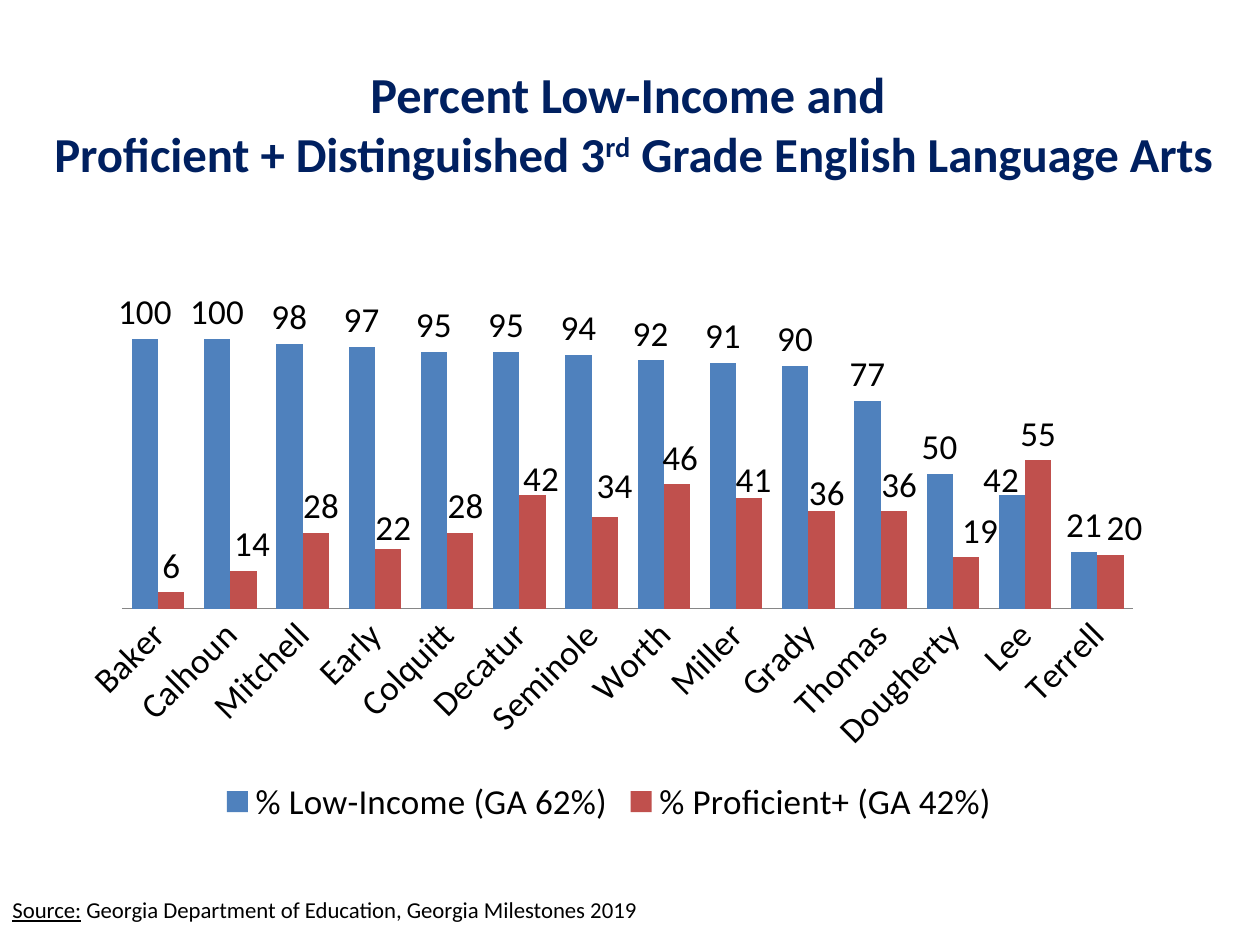
from lxml import etree
from pptx import Presentation
from pptx import util as u
from pptx.chart.data import CategoryChartData
from pptx.dml.color import RGBColor
from pptx.enum import chart as ch, text
from pptx.oxml import parse_xml
from pptx.oxml.ns import nsdecls, qn

COLORS = {"title": "002060", "text": "000000", "low_income": "4F81BD",
          "proficient": "C0504D", "axis": "868686"}
FONT = "Calibri"


def add_run(paragraph, words, size, color, bold=False, underline=False, baseline=None):
    run = paragraph.add_run()
    run.text = words
    run.font.name, run.font.size = FONT, u.Pt(size)
    run.font.bold, run.font.underline = bold, underline
    run.font.color.rgb = RGBColor.from_string(COLORS[color])
    if baseline:
        run.font._element.set("baseline", str(baseline))


def manual_layout(**values):
    tags = "".join(f'<c:{tag} val="{value}"/>' for tag, value in values.items())
    return parse_xml(f'<c:layout {nsdecls("c")}><c:manualLayout>{tags}</c:manualLayout></c:layout>')


prs = Presentation()
prs.slide_width, prs.slide_height = u.Inches(10), u.Inches(7.5)
slide = prs.slides.add_slide(prs.slide_layouts[5])

title = slide.shapes.title
title.left, title.top = u.Inches(0.25), u.Inches(0.25)
title.width, title.height = u.Inches(9.56), u.Inches(1.45)
title.text_frame.vertical_anchor = text.MSO_ANCHOR.MIDDLE
heading = title.text_frame.paragraphs[0]
heading.alignment = text.PP_ALIGN.CENTER
add_run(heading, "Percent Low-Income and ", 28.8, "title", bold=True)
heading.add_line_break()
add_run(heading, "Proficient + Distinguished 3", 27.9, "title", bold=True)
add_run(heading, "rd", 27.9, "title", bold=True, baseline=30000)
add_run(heading, " Grade English Language Arts", 27.9, "title", bold=True)

source = slide.shapes.add_textbox(u.Inches(0), u.Inches(7.14), u.Inches(8.75), u.Inches(0.25))
source.text_frame.word_wrap = True
citation = source.text_frame.paragraphs[0]
citation.line_spacing = 0.6
add_run(citation, "Source:", 13, "text", underline=True)
add_run(citation, " Georgia Department of Education, Georgia Milestones 2019", 13, "text")

counties = [
    ("Baker", 100, 6), ("Calhoun", 100, 14), ("Mitchell", 98, 28), ("Early", 97, 22),
    ("Colquitt", 95, 28), ("Decatur", 95, 42), ("Seminole", 94, 34), ("Worth", 92, 46),
    ("Miller", 91, 41), ("Grady", 90, 36), ("Thomas", 77, 36), ("Dougherty", 50, 19),
    ("Lee", 42, 55), ("Terrell", 21, 20),
]
names, low_income, proficient = zip(*counties)
scores = CategoryChartData(number_format="0")
scores.categories = names
scores.add_series("% Low-Income (GA 62%)", low_income)
scores.add_series("% Proficient+ (GA 42%)", proficient)
chart = slide.shapes.add_chart(
    ch.XL_CHART_TYPE.COLUMN_CLUSTERED, u.Inches(0.5), u.Inches(2.17),
    u.Inches(8.67), u.Inches(4.42), scores).chart
chart.has_title = False
chart.font.name, chart.font.size = FONT, u.Pt(20)
chart.font.color.rgb = RGBColor.from_string(COLORS["text"])
chart.has_legend = True
chart.legend.position = ch.XL_LEGEND_POSITION.BOTTOM
chart.legend.include_in_layout = False

county_axis = chart.category_axis
county_axis.major_tick_mark = ch.XL_TICK_MARK.NONE
county_axis.format.line.color.rgb = RGBColor.from_string(COLORS["axis"])
county_axis.tick_labels.font.size = u.Pt(20)
county_axis._element.find(qn("c:txPr")).find(qn("a:bodyPr")).set("rot", "-2700000")
percent_axis = chart.value_axis
percent_axis.minimum_scale, percent_axis.maximum_scale = 0, 120
percent_axis.has_major_gridlines = False
percent_axis.visible = False

plot = chart.plots[0]
plot.gap_width, plot.overlap = 75, 0
plot.vary_by_categories = False
plot_area = plot._element.getparent()
for layout in plot_area.findall(qn("c:layout")):
    plot_area.remove(layout)
plot_area.insert(0, manual_layout(layoutTarget="inner", xMode="edge", yMode="edge",
                                  x=0.054, y=0.02, w=0.926, h=0.582))

label_shifts = [
    {12: (-0.01, 0.02)},
    {1: (0.008, 0), 2: (0.005, 0), 3: (0.005, 0.01), 4: (0.005, 0), 5: (0.008, 0.018),
     6: (0.009, -0.007), 7: (0.003, 0), 8: (0.004, 0.015), 9: (0.005, 0.015),
     10: (0.005, 0), 11: (0.013, 0), 13: (0.013, 0)},
]
for series, color, shifts in zip(plot.series, ("low_income", "proficient"), label_shifts):
    series.format.fill.solid()
    series.format.fill.fore_color.rgb = RGBColor.from_string(COLORS[color])
    series.invert_if_negative = False
    labels = series.data_labels
    labels.show_value = True
    labels.number_format, labels.number_format_is_linked = "0", False
    labels.position = ch.XL_LABEL_POSITION.OUTSIDE_END
    labels.font.size = u.Pt(20)
    for index in shifts:
        label = series.points[index].data_label
        label.font.size = u.Pt(20)
        label.position = ch.XL_LABEL_POSITION.OUTSIDE_END
    for point_label in series._element.iter(qn("c:dLbl")):
        index = point_label.find(qn("c:idx"))
        x, y = shifts[int(index.get("val"))]
        index.addnext(manual_layout(x=x, y=y))

prs.save("out.pptx")
